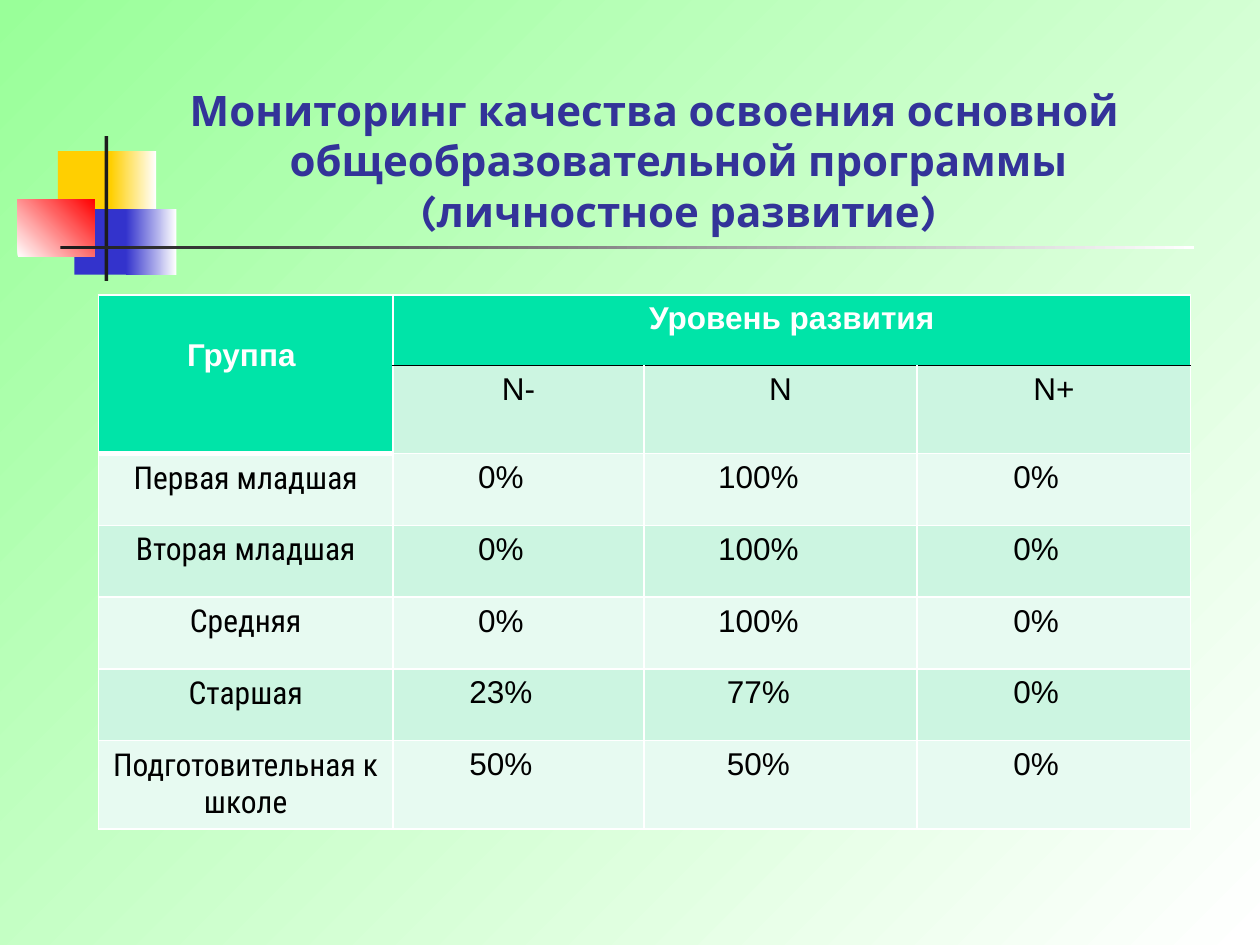
from lxml import etree
from pptx import Presentation
from pptx.dml.color import RGBColor
from pptx.enum.shapes import MSO_SHAPE
from pptx.enum.text import MSO_ANCHOR, PP_ALIGN
from pptx.oxml.ns import qn
from pptx.util import Inches, Pt

RECT = MSO_SHAPE.RECTANGLE
CENTER = PP_ALIGN.CENTER
TOP = MSO_ANCHOR.TOP

WHITE, BLACK, DARK = "FFFFFF", "000000", "1C1C1C"
GOLD, BLUE, RED = "FFCF01", "3333CC", "FF0000"
HEAD, BAND, PALE = "00E4A8", "CCF5E1", "E7FAF1"


def color(code):
    return RGBColor.from_string(code)


class Deck:
    sans = "Arial"
    narrow = "Roboto Condensed"
    title_font = "Karla"

    def __init__(self, width, height):
        self.prs = Presentation()
        self.prs.slide_width = Inches(width)
        self.prs.slide_height = Inches(height)
        self.slide = self.prs.slides.add_slide(self.prs.slide_layouts[6])

    def paint(self, fill, first, last=None, angle=0):
        """Solid fill, or a gradient with a clockwise angle."""
        if last is None:
            fill.solid()
            fill.fore_color.rgb = color(first)
            return
        fill.gradient()
        fill.gradient_angle = (360 - angle) % 360
        for stop, code in zip(fill.gradient_stops, (first, last)):
            stop.color.rgb = color(code)

    def block(self, box, *paint):
        shape = self.slide.shapes.add_shape(RECT, *map(Inches, box))
        shape.shadow.inherit = False
        shape.line.fill.background()
        self.paint(shape.fill, *paint)

    def label(self, frame, text, size, font, code, bold=False):
        frame.text = text
        para = frame.paragraphs[0]
        para.alignment = CENTER
        for run in para.runs:
            run.font.size = Pt(size)
            run.font.name = font
            run.font.bold = bold
            run.font.color.rgb = color(code)
        return para

    def title(self, box, text):
        frame = self.slide.shapes.add_textbox(*map(Inches, box)).text_frame
        frame.word_wrap = True
        para = self.label(frame, text, 24, self.title_font, "333399", True)
        # Hanging indent
        props = para._p.get_or_add_pPr()
        props.set("marL", str(Inches(0.38)))
        props.set("indent", str(-Inches(0.38)))

    def grid(self, left, top, cols, rows):
        table = self.slide.shapes.add_table(
            len(rows), len(cols), Inches(left), Inches(top),
            Inches(sum(cols)), Inches(sum(rows))).table
        for col, width in zip(table.columns, cols):
            col.width = Inches(width)
        for row, height in zip(table.rows, rows):
            row.height = Inches(height)
        return table

    def edge(self, cell, **sides):
        """Draw the four borders; sides override the thin white line."""
        props = cell._tc.get_or_add_tcPr()
        for spot, side in enumerate("LRTB"):
            code, width = sides.get(side, (WHITE, 1))
            line = etree.Element(qn(f"a:ln{side}"), w=str(Pt(width)))
            fill = etree.SubElement(line, qn("a:solidFill"))
            etree.SubElement(fill, qn("a:srgbClr"), val=code)
            props.insert(spot, line)

    def cell(self, cell, text, fill, font=sans, code=BLACK, bold=False,
             shift=0, drop=0, **sides):
        self.paint(cell.fill, fill)
        cell.vertical_anchor = TOP
        cell.margin_right = Inches(0.1 + shift)
        cell.margin_top = Inches(0.05 + drop)
        self.label(cell.text_frame, text, 18, font, code, bold)
        self.edge(cell, **sides)


def main():
    deck = Deck(10, 7.5)
    deck.paint(deck.slide.background.fill, "99FF99", WHITE, 45)

    # Corner ornament and rule
    deck.block((0.46, 1.2, 0.48, 0.52), GOLD)
    deck.block((0.88, 1.2, 0.36, 0.52), GOLD, WHITE)
    deck.block((0.59, 1.66, 0.46, 0.52), BLUE)
    deck.block((1, 1.66, 0.4, 0.52), BLUE, WHITE)
    deck.block((0.14, 1.58, 0.61, 0.46), WHITE, RED, 315)
    deck.block((0.83, 1.08, 0.03, 1.15), DARK)
    deck.block((0.48, 1.95, 9, 0.03), DARK, WHITE)

    # Table header
    table = deck.grid(0.78, 2.34, [2.34, 1.99, 2.17, 2.17],
                      [0.56, 0.7] + [0.57] * 4 + [0.7])
    table.cell(0, 0).merge(table.cell(1, 0))
    table.cell(0, 1).merge(table.cell(0, 3))
    rule = (BLACK, 1)
    for row in (0, 1):
        deck.cell(table.cell(row, 0), "" if row else "Группа", HEAD,
                  code=WHITE, bold=True, shift=0.07, drop=0.29,
                  B=(WHITE, 3))
    for col, level in enumerate(("N-", "N", "N+"), 1):
        deck.cell(table.cell(0, col), "Уровень развития" if col == 1 else "",
                  HEAD, code=WHITE, bold=True, B=rule)
        deck.cell(table.cell(1, col), level, BAND, T=rule)

    # Results by group
    groups = [
        ("Первая младшая", 0, 100, 0),
        ("Вторая младшая", 0, 100, 0),
        ("Средняя", 0, 100, 0),
        ("Старшая", 23, 77, 0),
        ("Подготовительная к школе", 50, 50, 0),
    ]
    shifts = (0.28, 0.35, 0.28)
    for row, (name, *shares) in enumerate(groups, 2):
        fill = BAND if row % 2 else PALE
        deck.cell(table.cell(row, 0), name, fill, deck.narrow)
        for col, (share, shift) in enumerate(zip(shares, shifts), 1):
            deck.cell(table.cell(row, col), f"{share}%", fill, shift=shift)

    # Title
    deck.title((0.86, 0.62, 8.67, 1.31),
               "Мониторинг качества освоения основной "
               "общеобразовательной программы (личностное развитие)")

    deck.prs.save("out.pptx")


if __name__ == "__main__":
    main()
